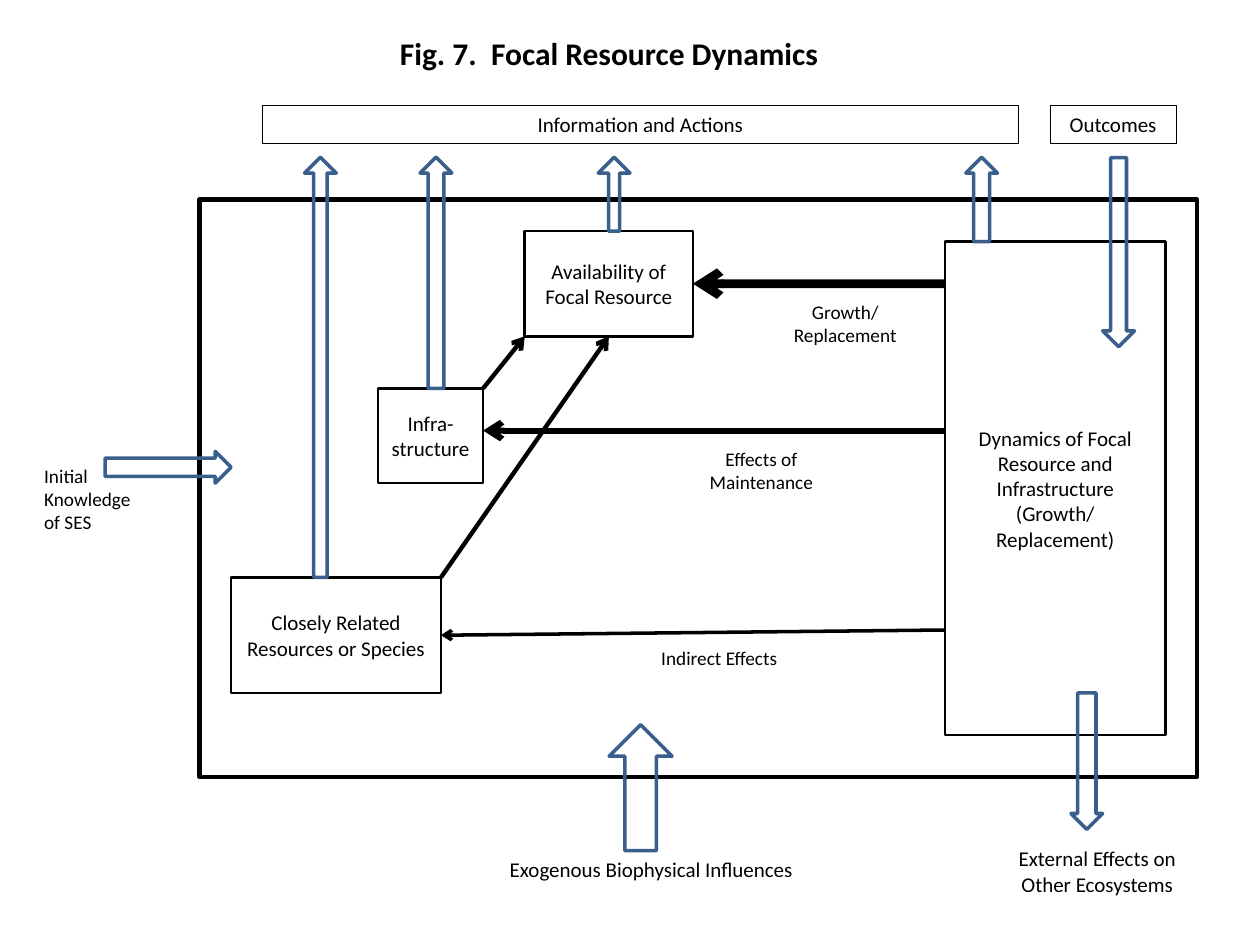
from dataclasses import dataclass

import pptx
import pptx.dml.color
import pptx.enum.shapes
import pptx.enum.text
import pptx.oxml
import pptx.oxml.ns
import pptx.util

SHAPE = pptx.enum.shapes.MSO_SHAPE
ALIGN = pptx.enum.text.PP_ALIGN
ANCHOR = pptx.enum.text.MSO_ANCHOR
TOP, LEFT, BOTTOM, RIGHT = range(4)


@dataclass(frozen=True)
class Theme:
    font: str = "Calibri"
    ink: str = "000000"
    paper: str = "FFFFFF"
    flow: str = "3A5F8C"
    title: float = 18
    body: float = 12
    note: float = 11
    hairline: float = 0.5
    box_line: float = 1.5
    flow_line: float = 2
    frame_line: float = 2.5


THEME = Theme()


def rgb(colour):
    return pptx.dml.color.RGBColor.from_string(colour)


def place(region, left, top, width, height):
    """Turn a box in cm, relative to the region, into slide lengths."""
    return [pptx.util.Cm(value) for value in
            (region[0] + left, region[1] + top, width, height)]


def write(shape, text, size=THEME.body, bold=False, align=ALIGN.CENTER,
          anchor=ANCHOR.MIDDLE, grow=False):
    frame = shape.text_frame
    frame.word_wrap = True
    frame.vertical_anchor = anchor
    if grow:
        frame.auto_size = pptx.enum.text.MSO_AUTO_SIZE.SHAPE_TO_FIT_TEXT
    frame.text = text
    for paragraph in frame.paragraphs:
        paragraph.alignment = align
        font = paragraph.font
        for run in paragraph.runs:
            font = run.font
            font.name, font.size, font.bold = THEME.font, pptx.util.Pt(size), bold
            font.color.rgb = rgb(THEME.ink)


def outline(slide, region, box, weight=THEME.box_line, colour=THEME.ink,
            kind=SHAPE.RECTANGLE):
    shape = slide.shapes.add_shape(kind, *place(region, *box))
    shape.shadow.inherit = False
    shape.fill.background()
    shape.line.color.rgb = rgb(colour)
    shape.line.width = pptx.util.Pt(weight)
    return shape


def label(slide, region, box, text, **text_format):
    write(slide.shapes.add_textbox(*place(region, *box)), text, **text_format)


def block_arrow(slide, region, box, kind=SHAPE.UP_ARROW, shaft=0.5):
    arrow = outline(slide, region, box, THEME.flow_line, THEME.flow, kind)
    arrow.adjustments[0] = shaft


def link(slide, start, end, weight, target=None):
    """Draw an arrow; target is (shape, side) when it ends mid-side."""
    connector = slide.shapes.add_connector(
        pptx.enum.shapes.MSO_CONNECTOR.STRAIGHT, *start, *end)
    if target:
        connector.end_connect(*target)
    connector.line.color.rgb = rgb(THEME.ink)
    connector.line.width = pptx.util.Pt(weight)
    namespace = pptx.oxml.ns.nsdecls("a")
    connector.line._get_or_add_ln().append(
        pptx.oxml.parse_xml(f'<a:tailEnd {namespace} type="arrow"/>'))
    connector._element.spPr.append(
        pptx.oxml.parse_xml(f"<a:effectLst {namespace}/>"))


def header(slide, region):
    title = outline(slide, region, (0, 0, 20.74, 0.85), colour=THEME.paper)
    write(title, "Fig. 7.  Focal Resource Dynamics", size=THEME.title, bold=True)
    for left, width, text in ((3.38, 15.24, "Information and Actions"),
                              (19.26, 2.54, "Outcomes")):
        bar = outline(slide, region, (left, 1.48, width, 0.77), THEME.hairline)
        write(bar, text, anchor=ANCHOR.TOP, grow=True)


def resource_system(slide, region):
    outline(slide, region, (0, 0, *region[2:]), THEME.frame_line)

    # Components, each with an arrow up to the information bar
    components = {
        "dynamics": ((15.03, 0.85, 4.45, 9.95), 15.45, 0.5,
                     "Dynamics of Focal Resource and Infrastructure\n"
                     "(Growth/ Replacement)"),
        "related": ((0.64, 7.62, 4.23, 2.33), 2.12, 0.42,
                    "Closely Related Resources or Species"),
        "infrastructure": ((3.6, 3.81, 2.12, 1.91), 4.45, 0.5, "Infra-structure"),
        "availability": ((6.56, 0.64, 3.39, 2.12), 8.04, 0.35,
                         "Availability of Focal Resource"),
    }
    arrow_top = -0.85
    boxes = {}
    for name, (box, arrow_left, shaft, text) in components.items():
        boxes[name] = outline(slide, region, box)
        write(boxes[name], text)
        block_arrow(slide, region,
                    (arrow_left, arrow_top, 0.64, box[1] - arrow_top), shaft=shaft)
    dynamics, related, infrastructure, availability = boxes.values()

    # Effects of the dynamics on the other components
    def right_edge(box, height):
        return box.left + box.width, pptx.util.Cm(region[1] + height)

    for target, start, end, weight, joined in (
            (availability, 1.7, 1.7, 5, True),
            (infrastructure, 4.66, 4.66, 3.5, False),
            (related, 8.68, 8.79, 2, True)):
        link(slide, (dynamics.left, pptx.util.Cm(region[1] + start)),
             right_edge(target, end), weight, (target, RIGHT) if joined else None)

    # Support for availability, from the upper right corners
    foot = availability.top + availability.height
    for source, end, target in (
            (related, availability.left + availability.width // 2,
             (availability, BOTTOM)),
            (infrastructure, availability.left, None)):
        link(slide, (source.left + source.width, source.top), (end, foot),
             THEME.frame_line, target)

    # Names of the effects
    for box, text in (((11.43, 1.91, 3.18, 1.19), "Growth/ Replacement"),
                      ((9.74, 4.87, 3.18, 1.19), "Effects of Maintenance"),
                      ((8.04, 8.89, 4.88, 0.74), "Indirect Effects")):
        label(slide, region, box, text, size=THEME.note, anchor=ANCHOR.TOP, grow=True)


def surroundings(slide, region):
    # Flows across the system boundary
    for box, kind, shaft in (
            ((22.23, 3.18, 0.64, 3.81), SHAPE.DOWN_ARROW, 0.5),
            ((21.59, 13.97, 0.64, 2.75), SHAPE.DOWN_ARROW, 0.58),
            ((2.12, 9.1, 2.54, 0.64), SHAPE.RIGHT_ARROW, 0.58),
            ((12.28, 14.61, 1.27, 2.54), SHAPE.UP_ARROW, 0.5)):
        block_arrow(slide, region, box, kind, shaft)

    # Their sources and destinations
    label(slide, region, (0.64, 9.1, 2.54, 1.91), "Initial Knowledge of SES",
          size=THEME.note, align=ALIGN.LEFT)
    for box, text in (
            ((20.11, 16.93, 4.02, 1.28), "External Effects on Other Ecosystems"),
            ((9.53, 17.15, 7.2, 0.77), "Exogenous Biophysical Influences")):
        label(slide, region, box, text, anchor=ANCHOR.TOP, grow=True)


def main():
    deck = pptx.Presentation()
    deck.slide_width, deck.slide_height = pptx.util.Cm(25.4), pptx.util.Cm(19.05)
    slide = deck.slides.add_slide(deck.slide_layouts[6])
    header(slide, (1.91, 0.64, 21.8, 2.25))
    resource_system(slide, (4.02, 4.02, 20.11, 11.64))
    surroundings(slide, (0, 0, 25.4, 19.05))
    deck.save("out.pptx")


if __name__ == "__main__":
    main()
